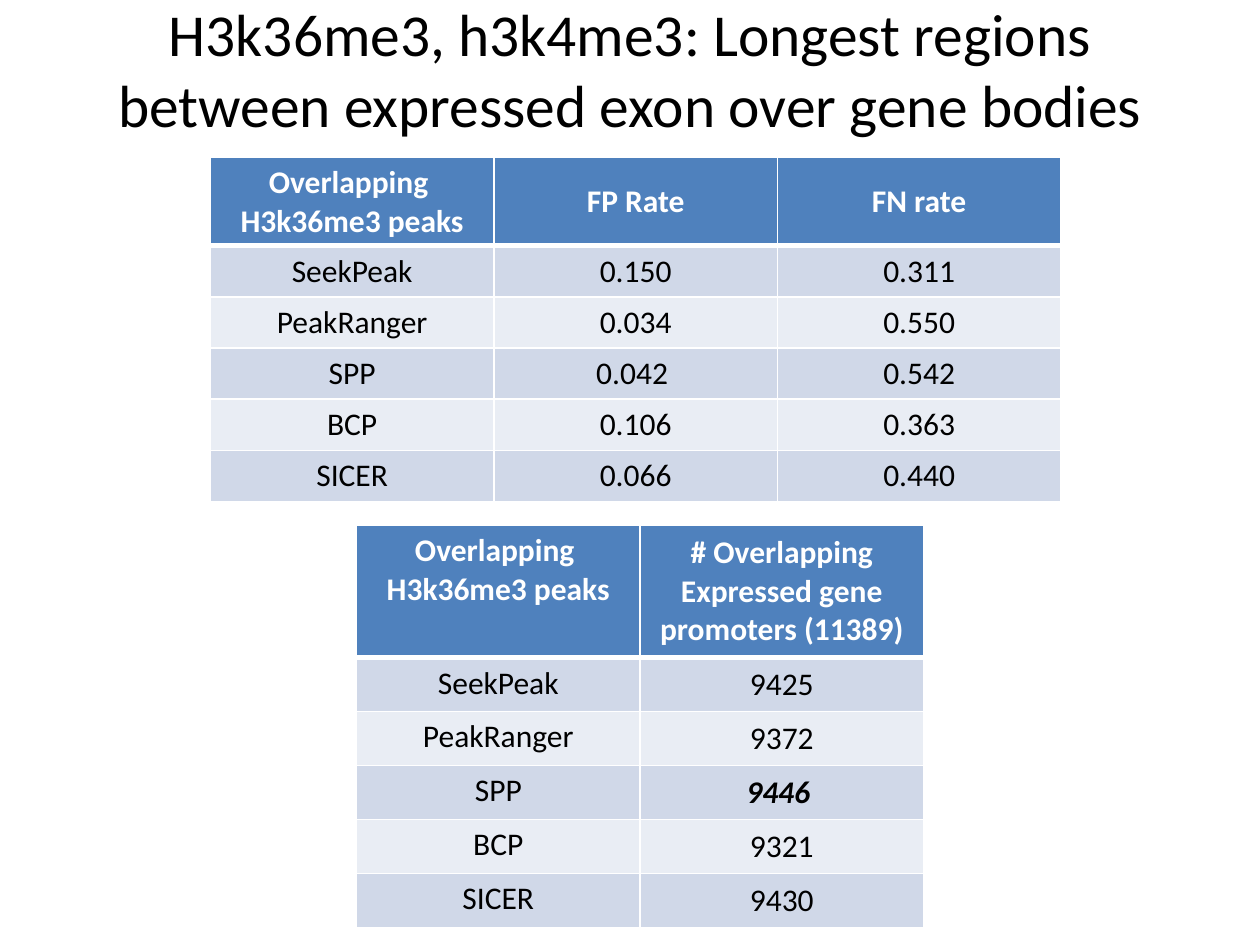
import pptx
import pptx.dml.color
import pptx.enum.text
import pptx.oxml
import pptx.oxml.ns
import pptx.util
from pptx.dml.color import RGBColor
from pptx.util import Inches

WHITE = RGBColor(0xFF, 0xFF, 0xFF)
BLACK = RGBColor(0x00, 0x00, 0x00)
HEADER_BLUE = RGBColor(0x4F, 0x81, 0xBD)
BAND_DARK = RGBColor(0xD0, 0xD8, 0xE8)
BAND_LIGHT = RGBColor(0xE9, 0xED, 0xF4)

TOP = pptx.enum.text.MSO_ANCHOR.TOP
MIDDLE = pptx.enum.text.MSO_ANCHOR.MIDDLE
PEAKS_HEADING = "Overlapping \vH3k36me3 peaks"

TITLE_FORMAT = {"name": "Calibri", "size": pptx.util.Pt(34)}
HEADER_FORMAT = {"name": "Calibri", "size": pptx.util.Pt(18), "bold": True}
BODY_FORMAT = {**HEADER_FORMAT, "bold": False, "italic": False}
BEST_FORMAT = {**BODY_FORMAT, "bold": True, "italic": True}

ERROR_RATES = [
    (PEAKS_HEADING, "FP Rate", "FN rate"),
    ("SeekPeak", "0.150", "0.311"),
    ("PeakRanger", "0.034", "0.550"),
    ("SPP", "0.042 ", "0.542"),
    ("BCP", "0.106", "0.363"),
    ("SICER", "0.066", "0.440"),
]
PROMOTER_COUNTS = [
    (PEAKS_HEADING, "# Overlapping Expressed gene promoters (11389)"),
    ("SeekPeak", "9425"),
    ("PeakRanger", "9372"),
    ("SPP", "9446 "),
    ("BCP", "9321"),
    ("SICER", "9430"),
]


def write_centred(frame, text, color, font_format):
    frame.text = text
    paragraph = frame.paragraphs[0]
    paragraph.alignment = pptx.enum.text.PP_ALIGN.CENTER
    for run in paragraph.runs:
        for attribute, value in font_format.items():
            setattr(run.font, attribute, value)
        run.font.color.rgb = color


def set_borders(cell, widths):
    properties = cell._tc.get_or_add_tcPr()
    for position, (side, width) in enumerate(widths.items()):
        border = pptx.oxml.parse_xml(
            f'<a:ln{side} {pptx.oxml.ns.nsdecls("a")} w="{pptx.util.Pt(width)}">'
            f'<a:solidFill><a:srgbClr val="{WHITE}"/></a:solidFill></a:ln{side}>'
        )
        properties.insert(position, border)


def add_title(slide, left, top, width, height):
    title = slide.shapes.add_textbox(left, top, width, height).text_frame
    title.word_wrap = True
    title.vertical_anchor = MIDDLE
    write_centred(
        title,
        "H3k36me3, h3k4me3: Longest regions between expressed exon over gene bodies",
        BLACK,
        TITLE_FORMAT,
    )


def add_peak_table(slide, left, top, width, height, header_height, records,
                   heading_anchor=MIDDLE, best=None):
    table = slide.shapes.add_table(
        len(records), len(records[0]), left, top, width, height
    ).table
    for column in table.columns:
        column.width = width // len(records[0])
    for index, record in enumerate(records):
        is_header = index == 0
        table.rows[index].height = (
            header_height if is_header
            else (height - header_height) // (len(records) - 1)
        )
        band = BAND_DARK if index % 2 else BAND_LIGHT
        for position, text in enumerate(record):
            cell = table.cell(index, position)
            cell.fill.solid()
            cell.fill.fore_color.rgb = HEADER_BLUE if is_header else band
            first_anchor = heading_anchor if is_header else TOP
            cell.vertical_anchor = MIDDLE if position else first_anchor
            body_format = BEST_FORMAT if (index, position) == best else BODY_FORMAT
            write_centred(
                cell.text_frame,
                text,
                WHITE if is_header else BLACK,
                HEADER_FORMAT if is_header else body_format,
            )
            set_borders(cell, {
                "L": 1,
                "R": 1,
                "T": 3 if index == 1 else 1,
                "B": 3 if is_header else 1,
            })


def main():
    presentation = pptx.Presentation()
    presentation.slide_width = Inches(10)
    presentation.slide_height = Inches(7.5)
    slide = presentation.slides.add_slide(presentation.slide_layouts[6])
    add_title(slide, Inches(0.5), Inches(0), Inches(9), Inches(1.08))
    add_peak_table(slide, Inches(1.67), Inches(1.25), Inches(6.75), Inches(2.73),
                   Inches(0.7), ERROR_RATES)
    add_peak_table(slide, Inches(2.83), Inches(4.17), Inches(4.5), Inches(3.19),
                   Inches(1.05), PROMOTER_COUNTS, heading_anchor=TOP, best=(3, 1))
    presentation.save("out.pptx")


if __name__ == "__main__":
    main()
